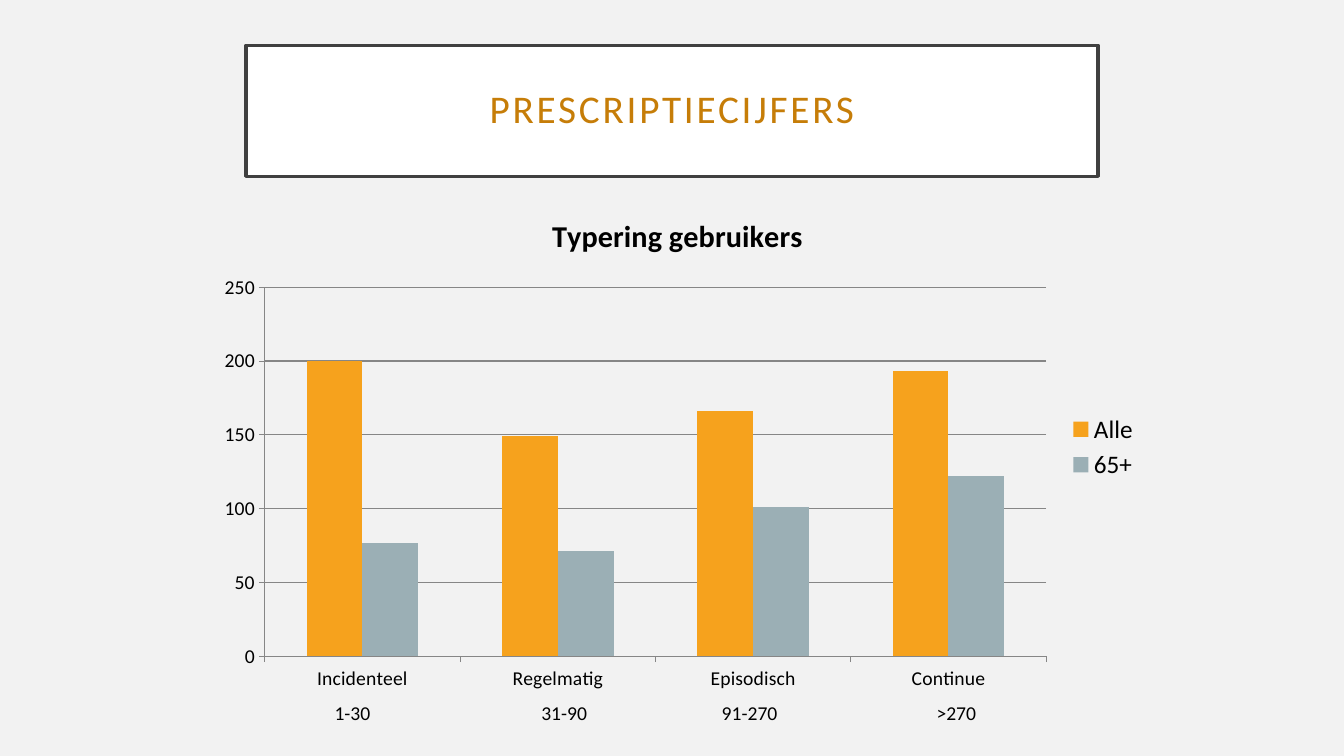
from lxml import etree
from pptx import Presentation
from pptx.chart.data import CategoryChartData
from pptx.dml.color import RGBColor
from pptx.enum.chart import XL_CHART_TYPE as ChartType, XL_LEGEND_POSITION as LegendPosition
from pptx.enum.chart import XL_TICK_MARK as TickMark
from pptx.enum.shapes import MSO_SHAPE as Shape
from pptx.enum.text import MSO_ANCHOR as Anchor, MSO_AUTO_SIZE as AutoSize, PP_ALIGN as Align
from pptx.util import Inches, Pt

FONT = "Calibri"
BLACK, AXIS_GREY = "000000", "868686"


def color(hex_code):
    return RGBColor.from_string(hex_code)


def style(font, size, hex_code=BLACK, bold=False):
    font.name, font.size, font.bold = FONT, Pt(size), bold
    font.color.rgb = color(hex_code)


deck = Presentation()
deck.slide_width, deck.slide_height = Inches(13.33), Inches(7.5)
slide = deck.slides.add_slide(deck.slide_layouts[6])
slide.background.fill.solid()
slide.background.fill.fore_color.rgb = color("F2F2F2")

# Framed heading
heading = slide.shapes.add_shape(
    Shape.RECTANGLE, Inches(2.44), Inches(0.45), Inches(8.45), Inches(1.3))
heading.shadow.inherit = False
heading.fill.solid()
heading.fill.fore_color.rgb = color("FFFFFF")
heading.line.color.rgb = color("404040")
heading.line.width = Pt(2.5)
frame = heading.text_frame
frame.word_wrap = True
frame.vertical_anchor = Anchor.MIDDLE
frame.margin_left = frame.margin_right = frame.margin_top = frame.margin_bottom = Inches(0.2)
paragraph = frame.paragraphs[0]
paragraph.alignment = Align.CENTER
paragraph.line_spacing = 0.9
run = paragraph.add_run()
run.text = "PRESCRIPTIECIJFERS"
style(run.font, 28, "C67D08")
run._r.get_or_add_rPr().set("spc", "200")

# Users by type, all ages against 65+
user_series = [
    ("Alle", (200, 149, 166, 193), "F6A21D"),
    ("65+", (77, 71, 101, 122), "9BAFB5"),
]
users = CategoryChartData()
users.categories = ["Incidenteel", "Regelmatig", "Episodisch", "Continue"]
for name, values, _ in user_series:
    users.add_series(name, values)
chart = slide.shapes.add_chart(
    ChartType.COLUMN_CLUSTERED, Inches(2.04), Inches(1.92), Inches(9.36), Inches(5.03), users).chart
style(chart.font, 18)

chart.has_title = True
chart_title = chart.chart_title
chart_title.include_in_layout = False
run = chart_title.text_frame.paragraphs[0].add_run()
run.text = "Typering gebruikers"
style(run.font, 21.6, bold=True)

chart.has_legend = True
chart.legend.position = LegendPosition.RIGHT
chart.legend.include_in_layout = False
style(chart.legend.font, 18)

columns = chart.plots[0]
columns.gap_width = 150
columns.overlap = 0
columns.vary_by_categories = False
for series, (_, _, hex_code) in zip(columns.series, user_series):
    series.format.fill.solid()
    series.format.fill.fore_color.rgb = color(hex_code)

for axis in (chart.category_axis, chart.value_axis):
    style(axis.tick_labels.font, 14)
    axis.major_tick_mark = TickMark.OUTSIDE
    axis.minor_tick_mark = TickMark.NONE
    axis.format.line.color.rgb = color(AXIS_GREY)
    axis.format.line.width = Pt(0.75)
value_axis = chart.value_axis
value_axis.minimum_scale, value_axis.maximum_scale, value_axis.major_unit = 0, 250, 50
value_axis.has_major_gridlines = True
value_axis.major_gridlines.format.line.color.rgb = color(AXIS_GREY)
value_axis.major_gridlines.format.line.width = Pt(0.75)

# Ranges of days below the categories
day_ranges = [("1-30", 3.22, 0.63), ("31-90", 5.27, 0.71), ("91-270", 7.06, 0.87), (">270", 9.19, 0.71)]
for days, left, width in day_ranges:
    frame = slide.shapes.add_textbox(
        Inches(left), Inches(6.9), Inches(width), Inches(0.34)).text_frame
    frame.word_wrap = False
    frame.auto_size = AutoSize.SHAPE_TO_FIT_TEXT
    run = frame.paragraphs[0].add_run()
    run.text = days
    style(run.font, 14)

deck.save("out.pptx")
